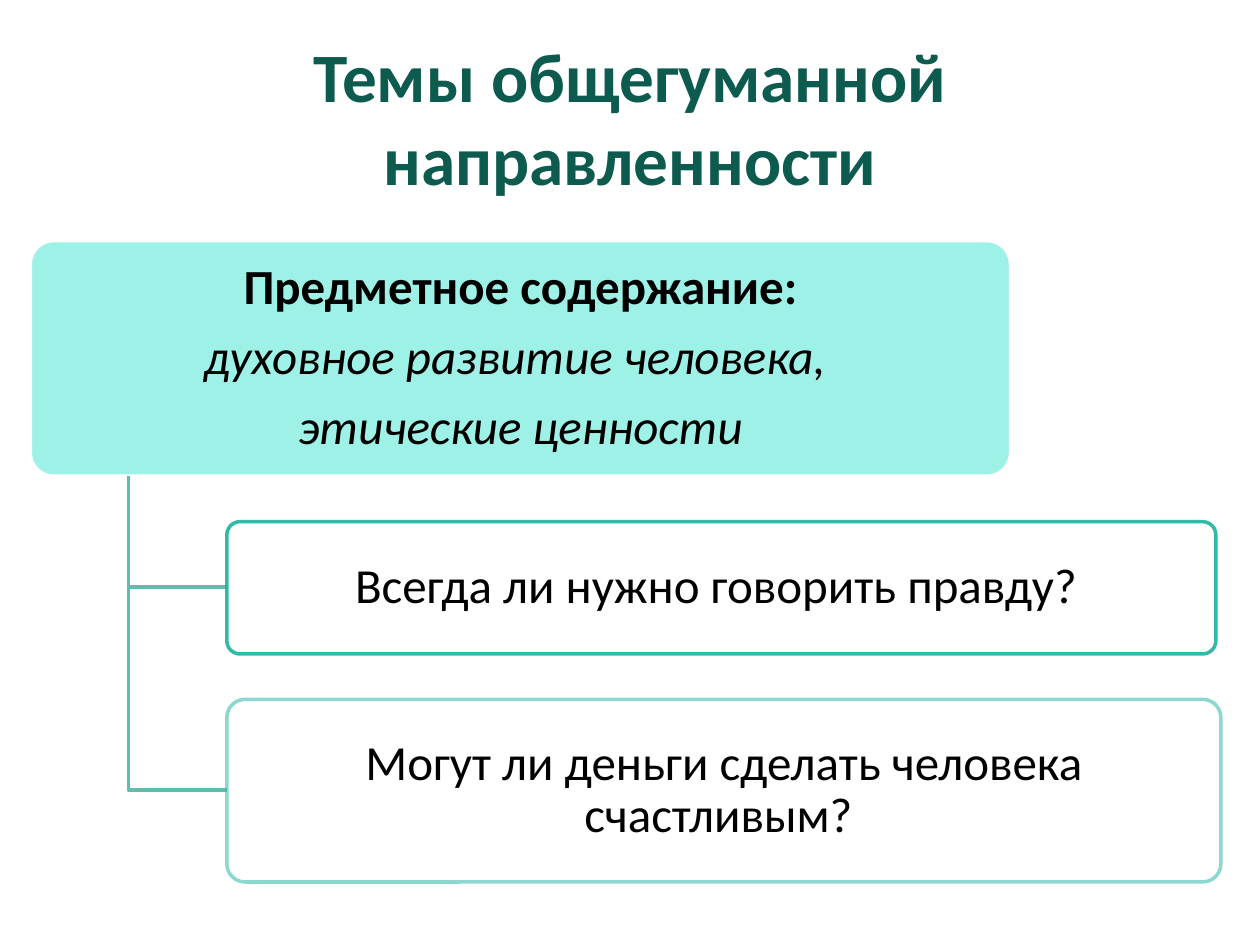
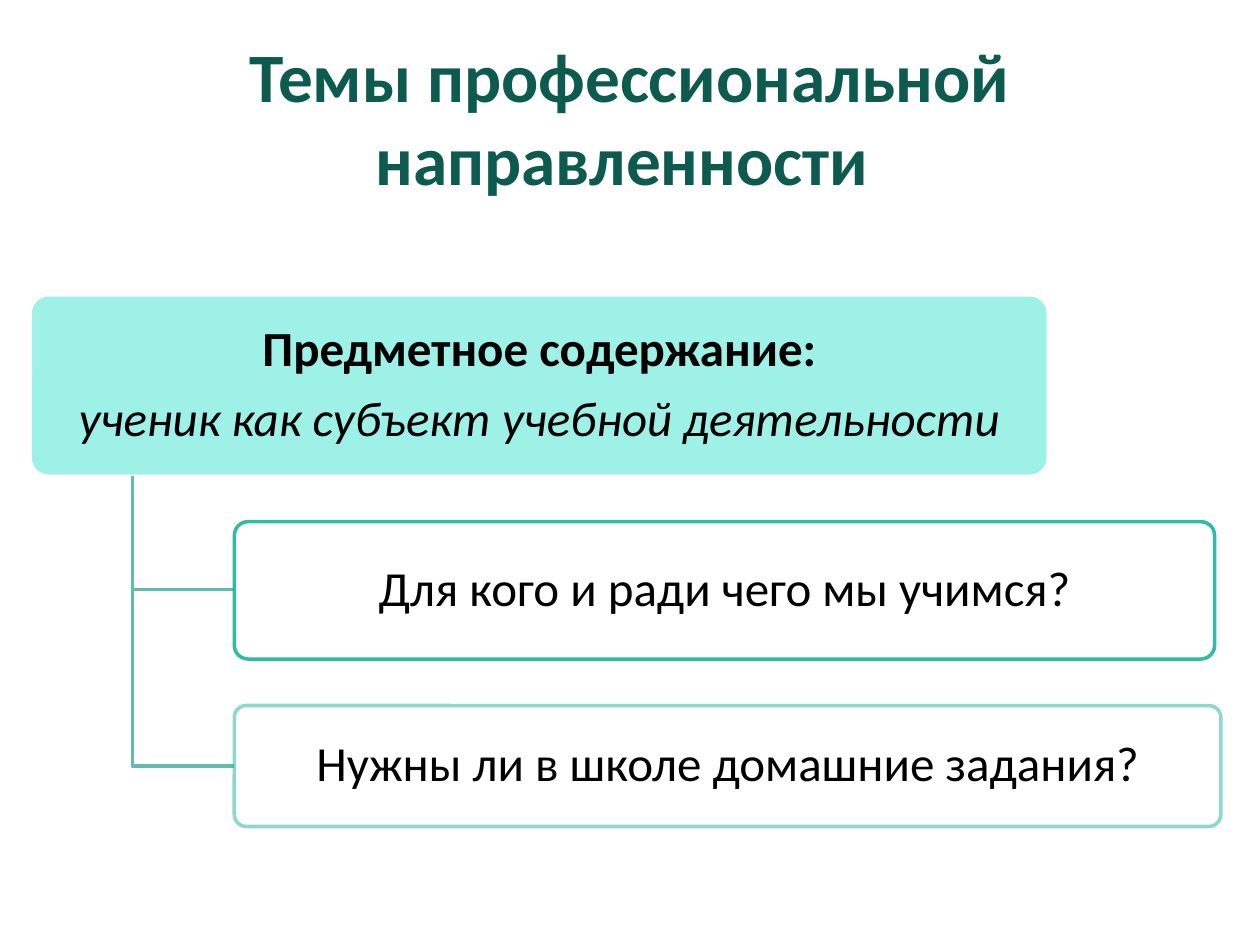
from lxml import etree
from pptx import Presentation
from pptx import util as u
from pptx.dml.color import RGBColor
from pptx.enum import shapes, text
from pptx.oxml.ns import qn

PX = 9144
FONT = "Calibri"
TITLE_COLOR = "0D5A4F"
HEADER_COLOR = "94F0E4"
BRANCH_COLOR = "60BCAC"
OUTLINE_COLOR = "1AB39F"
WHITE = "FFFFFF"
BLACK = "000000"
HEADER_LEFT = 24
HEADER_BOTTOM = 378
HEADING = "Предметное содержание:"

SLIDES = [
    {
        "title": "Темы общегуманной направленности",
        "header": (191, 778),
        "subjects": ["духовное развитие человека, ", "этические ценности"],
        "questions": [
            ("Всегда ли нужно говорить правду? ", 414, 785, 105, 90),
            ("Могут ли деньги сделать человека счастливым? ", 555, 789, 145, 50),
        ],
    },
    {
        "title": "Темы профессиональной направленности ",
        "header": (234, 808),
        "subjects": ["ученик как субъект учебной деятельности"],
        "questions": [
            ("Для кого и ради чего мы учимся?", 414, 778, 109, 90),
            ("Нужны ли в школе домашние задания?", 560, 783, 96, 50),
        ],
    },
]


def px(value):
    return u.Emu(value * PX)


def color(hex_value):
    return RGBColor.from_string(hex_value)


def set_opacity(shape, fill_path, percent):
    for tint in shape._element.spPr.findall(f"{fill_path}/{qn('a:srgbClr')}"):
        etree.SubElement(tint, qn("a:alpha"), val=str(percent * 1000))


def style_font(font, size, hex_value, bold=False, italic=False):
    font.name = FONT
    font.size = u.Pt(size)
    font.color.rgb = color(hex_value)
    font.bold = bold
    font.italic = italic


def set_title(page, wording):
    title = page.shapes.title
    title.left, title.top, title.width, title.height = map(px, (50, 30, 900, 125))
    title.text_frame.text = wording
    title.text_frame.vertical_anchor = text.MSO_ANCHOR.MIDDLE
    para = title.text_frame.paragraphs[0]
    para.alignment = text.PP_ALIGN.CENTER
    style_font(para.font, 39.6, TITLE_COLOR, bold=True)


def add_box(page, bounds, fill, line, line_opacity=100):
    box = page.shapes.add_shape(
        shapes.MSO_SHAPE.ROUNDED_RECTANGLE, *map(px, bounds))
    box.adjustments[0] = 0.1
    box.shadow.inherit = False
    box.fill.solid()
    box.fill.fore_color.rgb = color(fill)
    box.line.color.rgb = color(line)
    box.line.width = u.Pt(2)
    set_opacity(box, qn("a:solidFill"), 90)
    set_opacity(box, f"{qn('a:ln')}/{qn('a:solidFill')}", line_opacity)
    return box


def write_lines(box, lines, has_heading=False):
    frame = box.text_frame
    frame.word_wrap = True
    frame.vertical_anchor = text.MSO_ANCHOR.MIDDLE
    frame.margin_left = frame.margin_right = px(6)
    frame.margin_top = frame.margin_bottom = px(4)
    frame.text = "\n".join(lines)
    for index, para in enumerate(frame.paragraphs):
        para.alignment = text.PP_ALIGN.CENTER
        para.line_spacing = 0.9
        para.space_after = u.Pt(9.8)
        style_font(para.font, 28, BLACK,
                   bold=has_heading and index == 0,
                   italic=has_heading and index > 0)


def add_branch(page, trunk, end_x, end_y):
    builder = page.shapes.build_freeform(trunk, HEADER_BOTTOM, scale=PX)
    builder.add_line_segments([(trunk, end_y), (end_x, end_y)], close=False)
    branch = builder.convert_to_shape()
    branch.shadow.inherit = False
    branch.fill.background()
    branch.line.color.rgb = color(BRANCH_COLOR)
    branch.line.width = u.Pt(2)


def add_topic_tree(page, header, subjects, questions):
    top, width = header
    trunk = HEADER_LEFT + round(width / 10)
    question_left = HEADER_LEFT + round(width / 5)
    box = add_box(page, (HEADER_LEFT, top, width, HEADER_BOTTOM - top),
                  HEADER_COLOR, WHITE)
    write_lines(box, [HEADING, *subjects], has_heading=True)
    for wording, top, width, height, opacity in questions:
        add_branch(page, trunk, question_left, top + height // 2)
        box = add_box(page, (question_left, top, width, height),
                      WHITE, OUTLINE_COLOR, opacity)
        write_lines(box, [wording])


def main():
    deck = Presentation()
    deck.slide_width, deck.slide_height = px(1000), px(750)
    for content in SLIDES:
        page = deck.slides.add_slide(deck.slide_layouts[5])
        set_title(page, content["title"])
        add_topic_tree(page, content["header"], content["subjects"],
                       content["questions"])
    deck.save("out.pptx")


if __name__ == "__main__":
    main()
